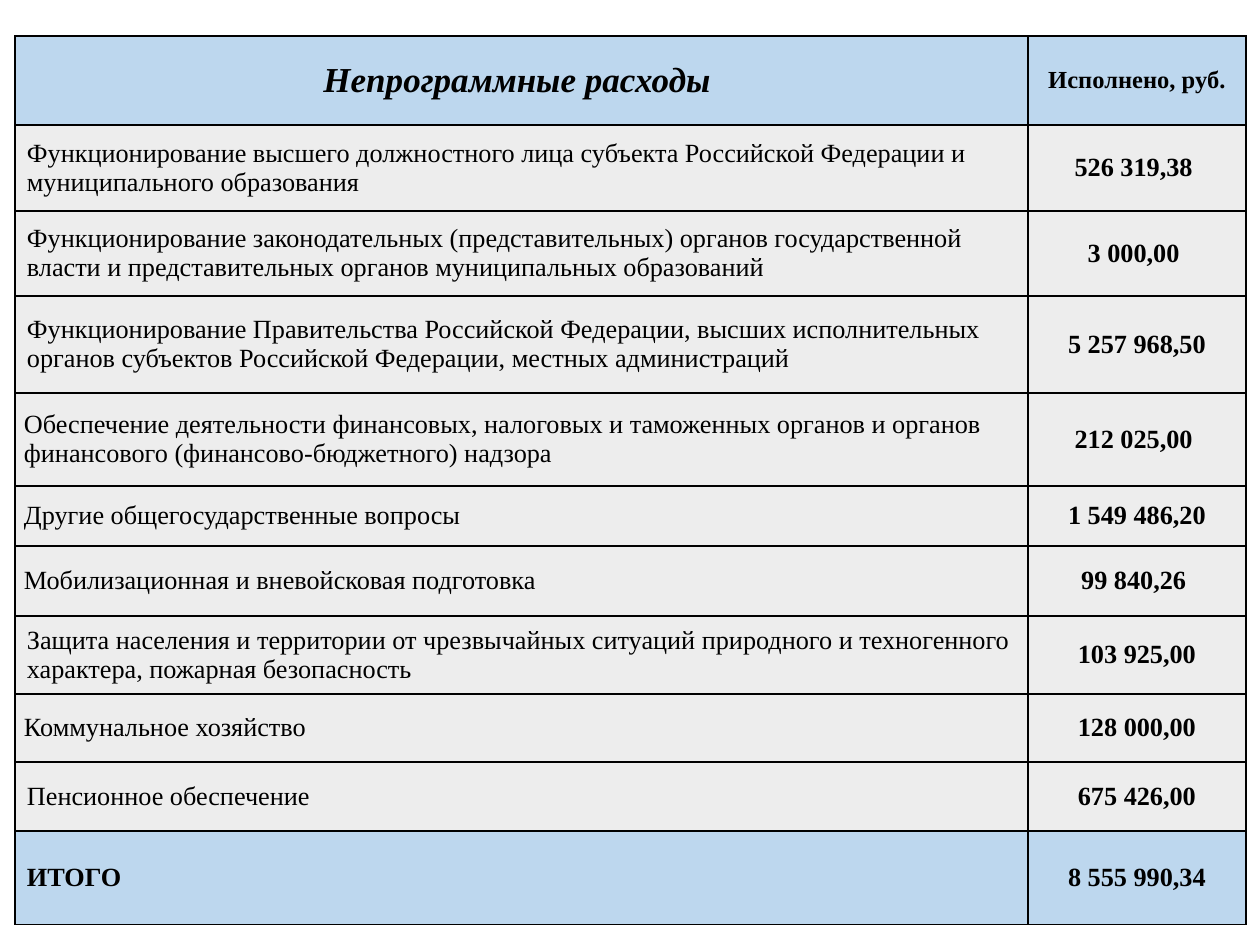
from lxml import etree
from pptx import Presentation
from pptx.dml.color import RGBColor
from pptx.enum.text import MSO_ANCHOR, PP_ALIGN
from pptx.oxml.ns import qn
from pptx.util import Emu, Pt

EMU_PER_PX = 914400 / 126
COLORS = {"text": "000000", "border": "000000", "accent": "BDD7EE", "body": "EDEDED"}
WIDE, TIGHT = (12, 6), (9, 0)  # horizontal and vertical cell margins

COLUMNS = [1013, 218]
HEADER = ("Непрограммные расходы ", "Исполнено, руб.")
# row height, name, amount, name margins, amount margins
EXPENSES = [
    (86, "Функционирование высшего должностного лица субъекта Российской Федерации "
         "и муниципального образования", "526 319,38 ", WIDE, WIDE),
    (85, "Функционирование законодательных (представительных) органов государственной "
         "власти и представительных органов муниципальных образований", "3 000,00 ", WIDE, WIDE),
    (97, "Функционирование Правительства Российской Федерации, высших исполнительных "
         "органов субъектов Российской Федерации, местных администраций",
     "5 257 968,50", WIDE, WIDE),
    (93, "Обеспечение деятельности финансовых, налоговых и таможенных органов и органов "
         "финансового (финансово-бюджетного) надзора", "212 025,00 ", TIGHT, TIGHT),
    (60, "Другие общегосударственные вопросы", "1 549 486,20", TIGHT, TIGHT),
    (70, "Мобилизационная и вневойсковая подготовка", "99 840,26 ", TIGHT, TIGHT),
    (78, "Защита населения и территории от чрезвычайных ситуаций природного и "
         "техногенного характера, пожарная безопасность", "103 925,00", WIDE, WIDE),
    (68, "Коммунальное хозяйство", "128 000,00", TIGHT, TIGHT),
    (69, "Пенсионное обеспечение", "675 426,00", WIDE, TIGHT),
]
TOTAL = ("ИТОГО", "8 555 990,34")
HEADER_HEIGHT, TOTAL_HEIGHT = 89, 94


def px(n):
    return Emu(round(n * EMU_PER_PX))


def rgb(name):
    return RGBColor.from_string(COLORS[name])


class SlideBuilder:
    font = "Times New Roman"
    border_width = Pt(1)

    def __init__(self, slide):
        self.slide = slide

    def table(self, left, top, widths, heights):
        frame = self.slide.shapes.add_table(
            len(heights), len(widths), px(left), px(top), px(sum(widths)), px(sum(heights)))
        table = frame.table
        table.first_row = table.horz_banding = False
        for column, width in zip(table.columns, widths):
            column.width = px(width)
        for row, height in zip(table.rows, heights):
            row.height = px(height)
        return table

    def cell(self, cell, text, fill="body", size=15, bold=False, italic=False,
             align=PP_ALIGN.LEFT, margins=WIDE):
        cell.fill.solid()
        cell.fill.fore_color.rgb = rgb(fill)
        cell.vertical_anchor = MSO_ANCHOR.MIDDLE
        cell.margin_left = cell.margin_right = px(margins[0])
        cell.margin_top = cell.margin_bottom = px(margins[1])
        p = cell.text_frame.paragraphs[0]
        p.alignment = align
        r = p.add_run()
        r.text = text
        r.font.name = self.font
        r.font.size = Pt(size)
        r.font.bold = bold
        r.font.italic = italic
        r.font.color.rgb = rgb("text")
        self.borders(cell)

    def borders(self, cell):
        """Outline all four sides; border elements must precede the fill."""
        props = cell._tc.get_or_add_tcPr()
        for i, side in enumerate(("a:lnL", "a:lnR", "a:lnT", "a:lnB")):
            line = etree.Element(qn(side), w=str(self.border_width))
            fill = etree.SubElement(line, qn("a:solidFill"))
            etree.SubElement(fill, qn("a:srgbClr"), val=COLORS["border"])
            props.insert(i, line)


def main():
    prs = Presentation()
    prs.slide_width, prs.slide_height = px(1260), px(945)
    s = SlideBuilder(prs.slides.add_slide(prs.slide_layouts[6]))
    center = PP_ALIGN.CENTER

    heights = [HEADER_HEIGHT, *(row[0] for row in EXPENSES), TOTAL_HEIGHT]
    table = s.table(15, 36, COLUMNS, heights)

    s.cell(table.cell(0, 0), HEADER[0], "accent", 20, bold=True, italic=True, align=center)
    s.cell(table.cell(0, 1), HEADER[1], "accent", 14, bold=True, align=center)
    for i, (_, name, amount, name_margins, amount_margins) in enumerate(EXPENSES, 1):
        s.cell(table.cell(i, 0), name, margins=name_margins)
        s.cell(table.cell(i, 1), amount, bold=True, align=center, margins=amount_margins)
    last = len(heights) - 1
    s.cell(table.cell(last, 0), TOTAL[0], "accent", bold=True)
    s.cell(table.cell(last, 1), TOTAL[1], "accent", bold=True, align=center)

    prs.save("out.pptx")


if __name__ == "__main__":
    main()
